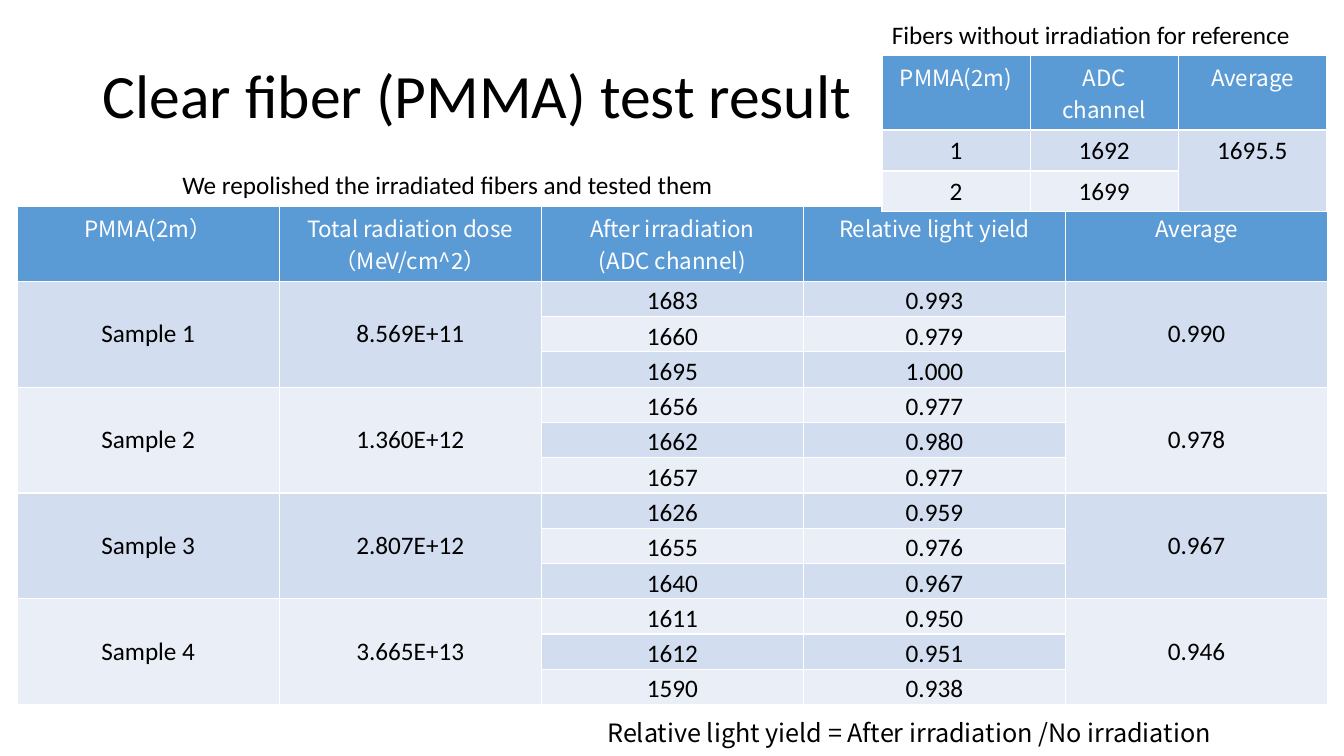
from pptx import Presentation
from pptx.dml.color import RGBColor
from pptx.enum.text import MSO_ANCHOR as Anchor, MSO_AUTO_SIZE as AutoSize, PP_ALIGN as Align
from pptx.util import Emu, Pt

PX = 9144
LATIN, CJK = "Calibri", "Noto Sans CJK SC"
BLACK, WHITE, HEADER_BLUE = "000000", "FFFFFF", "5B9BD5"
BANDS = ("D2DEEF", "EAEFF7")

SAMPLES = [
    ("Sample 1", "8.569E+11", "0.990", [("1683", "0.993"), ("1660", "0.979"), ("1695", "1.000")]),
    ("Sample 2", "1.360E+12", "0.978", [("1656", "0.977"), ("1662", "0.980"), ("1657", "0.977")]),
    ("Sample 3", "2.807E+12", "0.967", [("1626", "0.959"), ("1655", "0.976"), ("1640", "0.967")]),
    ("Sample 4", "3.665E+13", "0.946", [("1611", "0.950"), ("1612", "0.951"), ("1590", "0.938")]),
]
SAMPLE_HEADERS = ["PMMA(2m）", "Total radiation dose（MeV/cm^2）",
                  "After irradiation\n(ADC channel)", "Relative light yield", "Average"]
REFERENCE_HEADERS = ["PMMA(2m)", "ADC channel", "Average"]
REFERENCE_FIBERS = [("1", "1692"), ("2", "1699")]


def px(length):
    return Emu(length * PX)


def color(value):
    return RGBColor.from_string(value)


class SlideBuilder:
    def __init__(self, deck):
        self.slide = deck.slides.add_slide(deck.slide_layouts[5])

    def set_text(self, frame, text, size=18, font=LATIN, ink=BLACK, align=Align.CENTER):
        frame.word_wrap = True
        frame.text = text
        for paragraph in frame.paragraphs:
            paragraph.alignment = align
            paragraph.font.size = Pt(size)
            paragraph.font.name = font
            paragraph.font.bold = False
            paragraph.font.color.rgb = color(ink)

    def title(self, text, left, top, width, height):
        title = self.slide.shapes.title
        title.left, title.top, title.width, title.height = map(px, (left, top, width, height))
        frame = title.text_frame
        self.set_text(frame, text, size=44, align=Align.LEFT)
        frame.auto_size = AutoSize.NONE
        frame.vertical_anchor = Anchor.MIDDLE
        frame.paragraphs[0].line_spacing = 0.9

    def caption(self, text, left, top, width, font=LATIN, align=Align.LEFT):
        box = self.slide.shapes.add_textbox(px(left), px(top), px(width), px(40))
        self.set_text(box.text_frame, text, font=font, align=align)
        box.text_frame.auto_size = AutoSize.SHAPE_TO_FIT_TEXT

    def table(self, headers, left, top, column_width, header_height, row_height, row_count):
        columns = len(headers)
        table = self.slide.shapes.add_table(
            row_count + 1, columns, px(left), px(top), px(column_width * columns),
            px(header_height + row_height * row_count)).table
        for column in table.columns:
            column.width = px(column_width)
        for index, row in enumerate(table.rows):
            row.height = px(row_height if index else header_height)
        for index, header in enumerate(headers):
            self.cell(table, 0, index, header, HEADER_BLUE, size=16, font=CJK, ink=WHITE)
        return table

    def cell(self, table, row, column, text, fill, span=1, anchor=Anchor.TOP, tight=False, **style):
        cell = table.cell(row, column)
        if span > 1:
            cell.merge(table.cell(row + span - 1, column))
        cell.fill.solid()
        cell.fill.fore_color.rgb = color(fill)
        cell.vertical_anchor = anchor
        if tight:
            cell.margin_left = cell.margin_right = cell.margin_top = px(1)
            cell.margin_bottom = 0
        self.set_text(cell.text_frame, text, **style)


def main():
    deck = Presentation()
    deck.slide_width, deck.slide_height = Emu(12192000), Emu(6858000)
    page = SlideBuilder(deck)
    page.title("Clear fiber (PMMA) test result", 92, 40, 1150, 116)

    runs = len(SAMPLES[0][3])
    samples = page.table(SAMPLE_HEADERS, 17, 205, 260, 57, 35, runs * len(SAMPLES))
    for index, (name, dose, average, readings) in enumerate(SAMPLES):
        first = 1 + index * runs
        for column, text in ((0, name), (1, dose), (4, average)):
            page.cell(samples, first, column, text, BANDS[index % 2], span=runs, anchor=Anchor.MIDDLE)
        for row, reading in enumerate(readings, first):
            for column, text in enumerate(reading, 2):
                page.cell(samples, row, column, text, BANDS[(row - 1) % 2],
                          anchor=Anchor.BOTTOM, tight=True)

    reference = page.table(REFERENCE_HEADERS, 875, 55, 147, 58, 37, len(REFERENCE_FIBERS))
    for row, fiber in enumerate(REFERENCE_FIBERS, 1):
        for column, text in enumerate(fiber):
            page.cell(reference, row, column, text, BANDS[(row - 1) % 2])
    page.cell(reference, 1, 2, "1695.5", BANDS[0], span=len(REFERENCE_FIBERS))

    page.caption("Fibers without irradiation for reference", 875, 14, 442)
    page.caption("Relative light yield = After irradiation /No irradiation", 470, 707, 864,
                 font=CJK, align=Align.CENTER)
    page.caption("We repolished the irradiated fibers and tested them", 171, 163, 595)
    deck.save("out.pptx")


if __name__ == "__main__":
    main()
